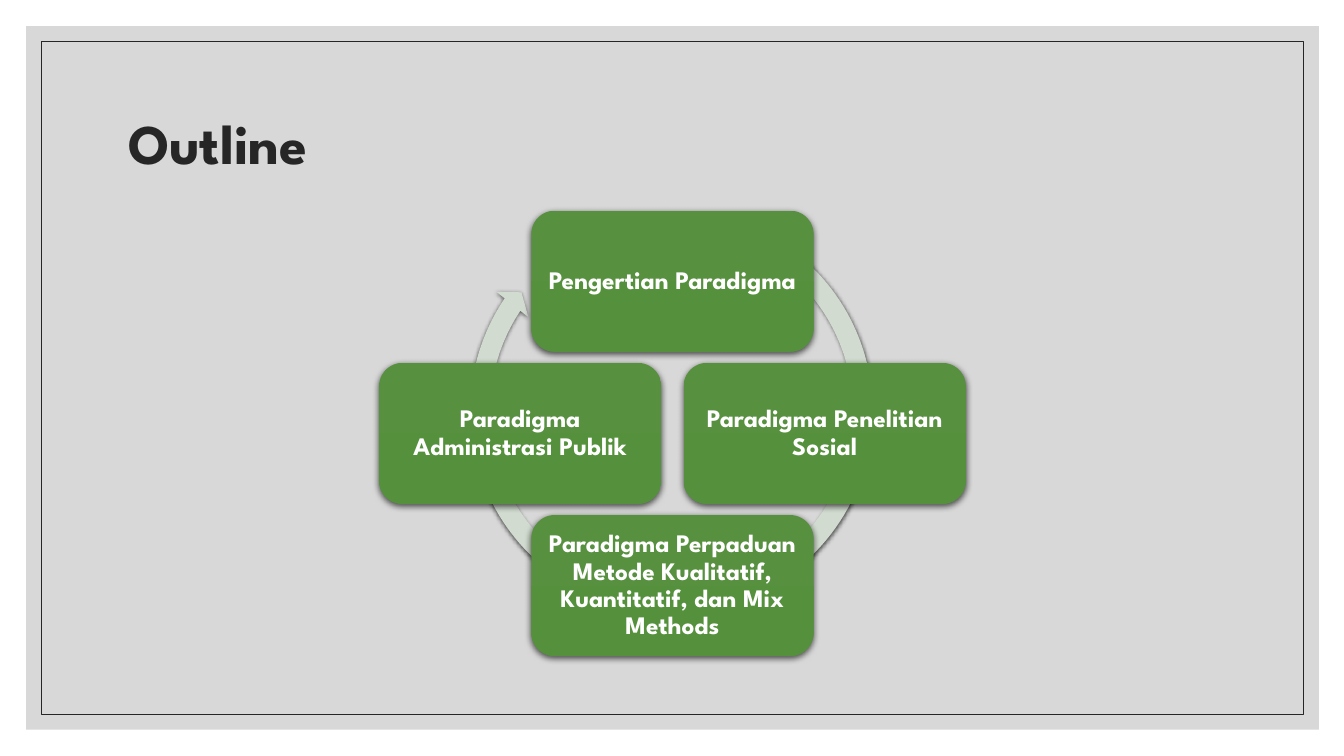
from lxml.etree import SubElement
from pptx import Presentation
from pptx.dml.color import RGBColor
from pptx.enum.shapes import MSO_SHAPE
from pptx.enum.text import MSO_ANCHOR, MSO_AUTO_SIZE, PP_ALIGN
from pptx.oxml import parse_xml
from pptx.oxml.ns import nsdecls, qn
from pptx.util import Pt

PX = 9144  # 100 px to the inch
FONT = "League Spartan"
WHITE = RGBColor(0xFF, 0xFF, 0xFF)
GREY = RGBColor(0xBF, 0xBF, 0xBF)
DARK = RGBColor(0x26, 0x26, 0x26)
GREEN_TOP = RGBColor(0x57, 0x90, 0x3F)
GREEN_BOTTOM = RGBColor(0x55, 0x91, 0x3C)
PALE_GREEN = RGBColor(0xD1, 0xDB, 0xCF)


def add_shape(kind, left, top, width, height):
    shape = slide.shapes.add_shape(kind, left * PX, top * PX, width * PX, height * PX)
    shape.shadow.inherit = False
    shape.line.fill.background()
    return shape


def add_shadow(shape, blur, distance):
    properties = shape.element.spPr
    effects = properties.find(qn("a:effectLst"))
    effects.append(parse_xml(
        f'<a:outerShdw {nsdecls("a")} blurRad="{Pt(blur)}" dist="{Pt(distance)}" '
        'dir="5400000" algn="ctr" rotWithShape="0"><a:srgbClr val="000000">'
        '<a:alpha val="63000"/></a:srgbClr></a:outerShdw>'))


presentation = Presentation()
presentation.slide_width = 1333 * PX
presentation.slide_height = 750 * PX
slide = presentation.slides.add_slide(presentation.slide_layouts[5])
slide.background.fill.solid()
slide.background.fill.fore_color.rgb = WHITE

# Grey panel with a thin inner frame
panel = add_shape(MSO_SHAPE.RECTANGLE, 26, 26, 1282, 698)
panel.fill.solid()
panel.fill.fore_color.rgb = GREY
panel_color = panel.element.spPr.find(qn("a:solidFill"))[0]
SubElement(panel_color, qn("a:alpha")).set("val", "60000")

frame = add_shape(MSO_SHAPE.RECTANGLE, 41, 41, 1252, 668)
frame.fill.background()
frame.line.color.rgb = DARK
frame.line.width = Pt(0.5)

# Title, in front of the panel
title = slide.shapes.title
title.left, title.top, title.width, title.height = 117 * PX, 70 * PX, 1100 * PX, 150 * PX
frame.element.addnext(title.element)
title.text_frame.text = "Outline"
title.text_frame.vertical_anchor = MSO_ANCHOR.MIDDLE
heading = title.text_frame.paragraphs[0]
heading.alignment = PP_ALIGN.LEFT
heading.line_spacing = 0.9
heading.font.name = FONT
heading.font.size = Pt(40)
heading.font.bold = True
heading.font.color.rgb = DARK

# Circular arrow behind the topics
arrow = add_shape(MSO_SHAPE.CIRCULAR_ARROW, 456, 198, 420, 420)
for index, value in enumerate([0.047, 2.729, 128.321, 180.304, 0.048]):
    arrow.adjustments[index] = value
arrow.fill.solid()
arrow.fill.fore_color.rgb = PALE_GREEN
add_shadow(arrow, 3, 1)

# Four topics clockwise around the centre
CENTER_X, CENTER_Y, RADIUS = 667, 430, 151
BOX_WIDTH, BOX_HEIGHT = 280, 140
topics = [
    ("Pengertian Paradigma", 0, -1),
    ("Paradigma Penelitian Sosial", 1, 0),
    ("Paradigma Perpaduan Metode Kualitatif, Kuantitatif, dan Mix Methods", 0, 1),
    ("Paradigma Administrasi Publik", -1, 0),
]
for text, across, down in topics:
    box = add_shape(MSO_SHAPE.ROUNDED_RECTANGLE,
                    CENTER_X + across * RADIUS - BOX_WIDTH // 2,
                    CENTER_Y + down * RADIUS - BOX_HEIGHT // 2,
                    BOX_WIDTH, BOX_HEIGHT)
    box.fill.gradient()
    box.fill.gradient_angle = 270
    for stop, color in zip(box.fill.gradient_stops, [GREEN_TOP, GREEN_BOTTOM]):
        stop.color.rgb = color
    add_shadow(box, 4.5, 1.5)

    text_frame = box.text_frame
    text_frame.word_wrap = True
    text_frame.auto_size = MSO_AUTO_SIZE.NONE
    text_frame.vertical_anchor = MSO_ANCHOR.MIDDLE
    text_frame.margin_left = text_frame.margin_right = 7 * PX
    text_frame.margin_top = text_frame.margin_bottom = 7 * PX
    text_frame.text = text
    paragraph = text_frame.paragraphs[0]
    paragraph.alignment = PP_ALIGN.CENTER
    paragraph.line_spacing = 0.9
    paragraph.font.name = FONT
    paragraph.font.size = Pt(18)
    paragraph.font.bold = True
    paragraph.font.color.rgb = WHITE

presentation.save("out.pptx")
